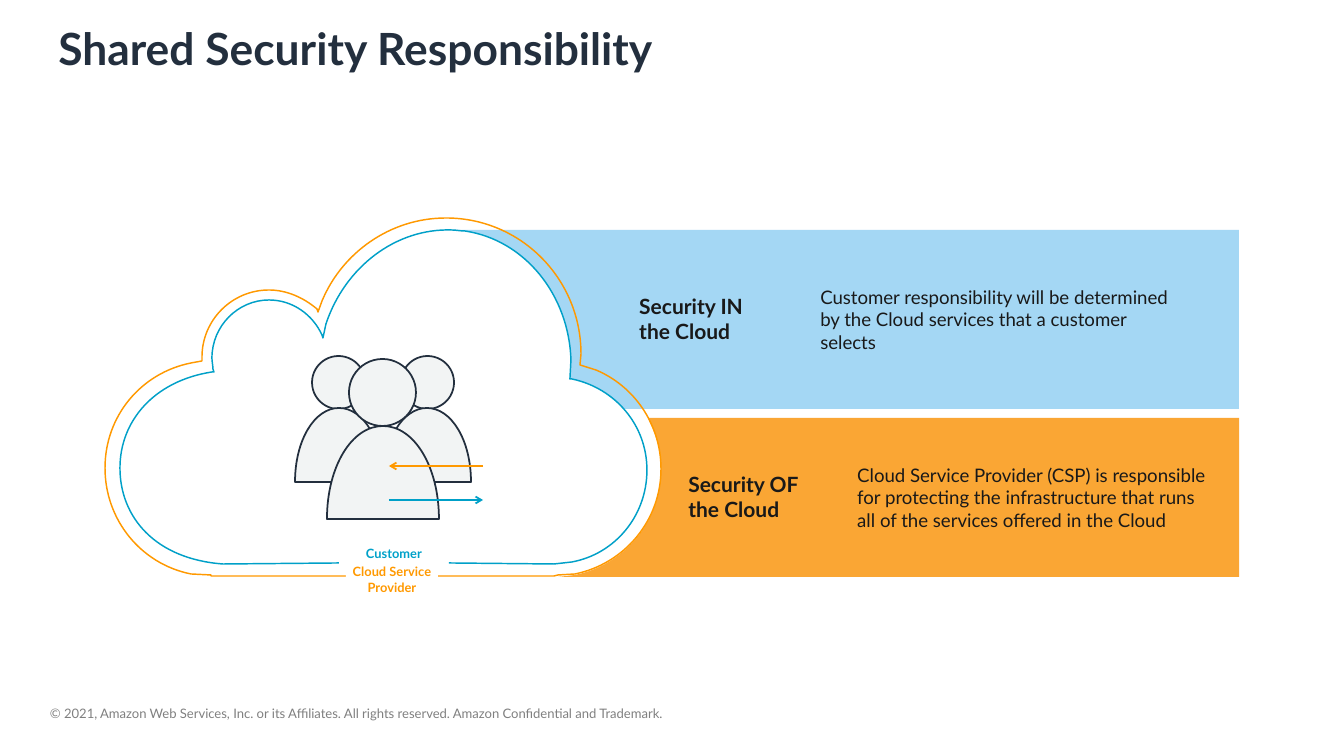
from lxml import etree
from pptx import Presentation
from pptx.dml.color import RGBColor
from pptx.enum.shapes import MSO_CONNECTOR as CONNECTOR, MSO_SHAPE as SHAPE
from pptx.enum.text import MSO_ANCHOR as ANCHOR, PP_ALIGN as ALIGN
from pptx.oxml.ns import qn
from pptx.util import Emu, Pt

PX = 914400 // 84
FONT = "Lato"
NAVY = RGBColor(0x23, 0x2F, 0x3E)
INK = RGBColor(0x19, 0x19, 0x19)
GREY = RGBColor(0x80, 0x80, 0x80)
WHITE = RGBColor(0xFF, 0xFF, 0xFF)
PALE = RGBColor(0xF2, 0xF4, 0xF4)
SKY = RGBColor(0xA4, 0xD7, 0xF4)
AMBER = RGBColor(0xFA, 0xA6, 0x34)
ORANGE = RGBColor(0xFF, 0x99, 0x00)
BLUE = RGBColor(0x00, 0xA0, 0xC8)
BLUE_TEXT = RGBColor(0x00, 0xA1, 0xC9)

deck = Presentation()
deck.slide_width = Emu(1344 * PX)
deck.slide_height = Emu(756 * PX)
page = deck.slides.add_slide(deck.slide_layouts[6])
shapes = page.shapes


def draw_outline(start, segments, fill=None, line=None, width=1.25, close=True):
    builder = shapes.build_freeform(start[0] * PX, start[1] * PX, scale=1.0)
    builder.add_line_segments(
        [(segment[-2] * PX, segment[-1] * PX) for segment in segments], close=close)
    outline = builder.convert_to_shape()
    edges = list(outline._element.iter(qn("a:lnTo")))
    for edge, segment in zip(edges, segments):
        if len(segment) == 6:
            edge.tag = qn("a:cubicBezTo")
            for place in (0, 1):
                x, y = segment[2 * place:2 * place + 2]
                handle = etree.Element(qn("a:pt"), x=str(round(x * PX) - outline.left),
                                       y=str(round(y * PX) - outline.top))
                edge.insert(place, handle)
    outline.shadow.inherit = False
    if fill is None:
        outline.fill.background()
    else:
        outline.fill.solid()
        outline.fill.fore_color.rgb = fill
    if line is None:
        outline.line.fill.background()
    else:
        outline.line.color.rgb = line
        outline.line.width = Pt(width)


def add_text(area, words, size, color, bold=False, anchor=ANCHOR.TOP,
             align=ALIGN.LEFT, inset=True, fill=None):
    place = [Emu(n * PX) for n in area]
    if fill is None:
        box = shapes.add_textbox(*place)
    else:
        box = shapes.add_shape(SHAPE.RECTANGLE, *place)
        box.shadow.inherit = False
        box.fill.solid()
        box.fill.fore_color.rgb = fill
        box.line.fill.background()
    frame = box.text_frame
    frame.word_wrap = True
    frame.vertical_anchor = anchor
    if not inset:
        frame.margin_left = frame.margin_right = 0
        frame.margin_top = frame.margin_bottom = 0
    para = frame.paragraphs[0]
    para.alignment = align
    span = para.add_run()
    span.text = words
    span.font.name = FONT
    span.font.size = Pt(size)
    span.font.bold = bold
    span.font.color.rgb = color


add_text((50, 705, 654, 16),
         "© 2021, Amazon Web Services, Inc. or its Affiliates. All rights reserved. "
         "Amazon Confidential and Trademark.", 11.2, GREY, inset=False)
add_text((50, 17, 1242, 92), "Shared Security Responsibility", 38, NAVY, bold=True)

draw_outline((648, 418), [
    (1239, 418), (1239, 577), (558, 577), (575, 575),
    (624, 565, 661, 522, 661, 470), (661, 453, 657, 437, 650, 423),
], fill=AMBER)
draw_outline((444, 230), [
    (1239, 230), (1239, 409), (623, 409), (614, 400),
    (602, 390, 588, 382, 572, 379), (570, 379), (571, 360),
    (569, 295, 525, 240, 465, 231), (460, 231, 456, 230, 452, 230),
], fill=SKY)

bands = [
    ((680, 467, 148, 60), "Security OF the Cloud", (849, 448, 372, 99),
     "Cloud Service Provider (CSP) is responsible for protecting the "
     "infrastructure that runs all of the services offered in the Cloud"),
    ((631, 289, 136, 60), "Security IN the Cloud", (812, 281, 381, 77),
     "Customer responsibility will be determined by the Cloud services "
     "that a customer selects"),
]
for heading_area, heading, detail_area, detail in bands:
    add_text(heading_area, heading, 18, INK, bold=True)
    add_text(detail_area, detail, 16, INK, anchor=ANCHOR.MIDDLE)

draw_outline((446, 218), [
    (521, 218, 581, 279, 581, 354), (580, 365), (596, 370),
    (634, 386, 661, 424, 661, 469), (661, 521, 624, 564, 575, 574),
    (558, 575), (554, 576), (211, 576), (211, 575), (191, 574),
    (141, 564, 105, 520, 105, 468), (105, 416, 141, 373, 191, 363),
    (202, 361), (202, 357),
    (202, 320, 232, 290, 269, 290), (287, 290, 304, 298, 317, 309),
    (318, 312), (322, 301), (342, 253, 390, 218, 446, 218),
], line=ORANGE)
add_text((346, 564, 92, 31), "Cloud Service Provider", 11, ORANGE, bold=True,
         anchor=ANCHOR.MIDDLE, align=ALIGN.CENTER, inset=False, fill=WHITE)
draw_outline((339, 563), [
    (224, 564), (223, 564),
    (155, 559, 120, 517, 120, 468), (120, 421, 154, 381, 212, 372),
    (214, 372), (213, 369), (213, 365, 212, 362, 212, 358),
    (212, 326, 238, 300, 269, 300), (293, 300, 313, 315, 322, 335),
    (323, 338), (326, 324),
    (345, 267, 396, 228, 452, 230), (456, 230, 460, 231, 465, 231),
    (525, 240, 569, 295, 571, 360), (570, 379), (572, 379),
    (615, 388, 647, 425, 647, 470), (647, 516, 615, 554, 572, 562),
    (554, 564), (449, 563),
], fill=WHITE, line=BLUE, close=False)
add_text((351, 542, 86, 23), "Customer", 11, BLUE_TEXT, bold=True,
         anchor=ANCHOR.MIDDLE, align=ALIGN.CENTER, inset=False)

people = [
    ((312, 356, 53), (295, 408, 88, 74)),
    ((401, 356, 53), (383, 408, 88, 74)),
    ((349, 359, 67), (327, 426, 112, 93)),
]
for (head_x, head_y, size), (x, y, width, height) in people:
    head = shapes.add_shape(SHAPE.OVAL, *[Emu(n * PX) for n in (head_x, head_y, size, size)])
    head.shadow.inherit = False
    head.fill.solid()
    head.fill.fore_color.rgb = PALE
    head.line.color.rgb = NAVY
    head.line.width = Pt(1.5)
    right, base, shoulder = x + width, y + height, y + 0.44 * height
    draw_outline((x, base), [
        (x, shoulder, x + 0.22 * width, y, x + width / 2, y),
        (right - 0.22 * width, y, right, shoulder, right, base),
    ], fill=PALE, line=NAVY, width=1.5)

for start_x, end_x, y, color in [(389, 483, 500, BLUE), (483, 389, 466, ORANGE)]:
    arrow = shapes.add_connector(CONNECTOR.STRAIGHT, *[Emu(n * PX) for n in (start_x, y, end_x, y)])
    arrow.line.color.rgb = color
    arrow.line.width = Pt(1.5)
    etree.SubElement(arrow.line._get_or_add_ln(), qn("a:tailEnd"), type="arrow")
    etree.SubElement(arrow._element.spPr, qn("a:effectLst"))

deck.save("out.pptx")
